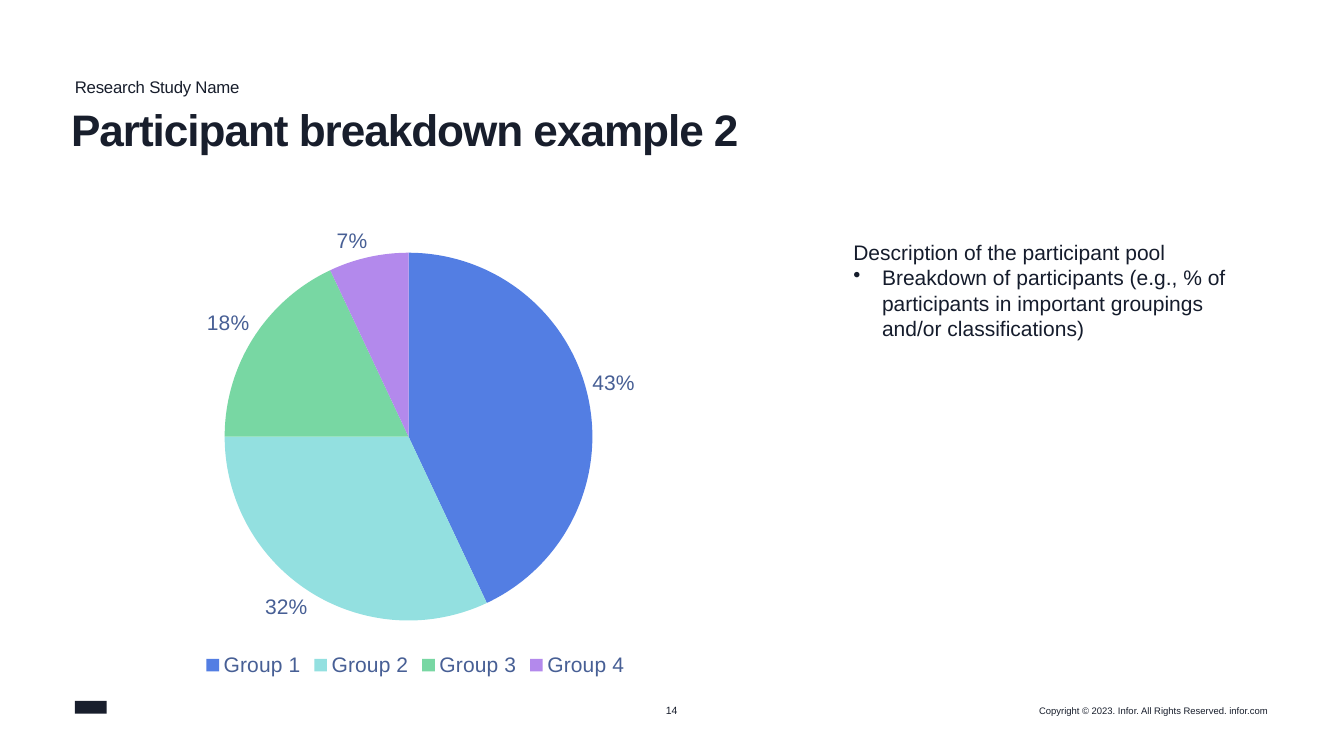
import pptx
import pptx.chart.data
import pptx.dml.color
import pptx.enum.chart
import pptx.enum.shapes
import pptx.enum.text
import pptx.oxml
import pptx.oxml.ns
import pptx.util
from dataclasses import dataclass

WIDTH, HEIGHT = 17.78, 10
LEFT = 0.99
Align = pptx.enum.text.PP_ALIGN
Anchor = pptx.enum.text.MSO_ANCHOR


@dataclass(frozen=True)
class Theme:
    font: str = "Arial"
    ink: str = "181E2C"
    body_ink: str = "151C2C"
    label_ink: str = "475F95"
    slices: tuple = ("537EE3", "93E0E0", "78D7A3", "B389EC")
    title: int = 42
    body: int = 20
    kicker: int = 16
    page: int = 10
    footer: int = 9


THEME = Theme()


def rgb(value):
    return pptx.dml.color.RGBColor.from_string(value)


def inches(*lengths):
    return [pptx.util.Inches(length) for length in lengths]


def set_attributes(target, values):
    for name, value in values.items():
        setattr(target, name, value)


def style_font(font, size, color, bold=False):
    set_attributes(font, {"name": THEME.font, "size": pptx.util.Pt(size), "bold": bold})
    font.color.rgb = rgb(color)


def add_bullet(paragraph, indent):
    properties = paragraph._p.get_or_add_pPr()
    properties.set("marL", str(pptx.util.Inches(indent)))
    properties.set("indent", str(-pptx.util.Inches(indent)))
    bullet = pptx.oxml.parse_xml(
        f'<a:buChar {pptx.oxml.ns.nsdecls("a")} char="•"/>')
    properties.append(bullet)


def add_text(slide, box, lines, size, color, bold=False, spacing=0, inset=(0, 0),
             wrap=True, anchor=Anchor.TOP, bullets=(), **paragraph_format):
    frame = slide.shapes.add_textbox(*inches(*box)).text_frame
    horizontal, vertical = inches(*inset)
    set_attributes(frame, {
        "word_wrap": wrap, "vertical_anchor": anchor,
        "margin_left": horizontal, "margin_right": horizontal,
        "margin_top": vertical, "margin_bottom": vertical})
    for index, line in enumerate(lines):
        paragraph = frame.paragraphs[0] if index == 0 else frame.add_paragraph()
        set_attributes(paragraph, paragraph_format)
        if index in bullets:
            add_bullet(paragraph, 0.38)
        run = paragraph.add_run()
        run.text = line
        style_font(run.font, size, color, bold)
        if spacing:
            run._r.get_or_add_rPr().set("spc", str(round(spacing * 100)))


def set_plot_area(chart, **shares):
    """Place the plot by shares of the chart's size."""
    plot_area = chart._chartSpace.chart.plotArea
    for old in plot_area.findall(pptx.oxml.ns.qn("c:layout")):
        plot_area.remove(old)
    values = "".join(f'<c:{name} val="{share}"/>' for name, share in shares.items())
    plot_area.insert(0, pptx.oxml.parse_xml(
        f'<c:layout {pptx.oxml.ns.nsdecls("c")}><c:manualLayout>'
        '<c:layoutTarget val="inner"/><c:xMode val="edge"/><c:yMode val="edge"/>'
        f'{values}</c:manualLayout></c:layout>'))


def add_pie(slide, box, shares):
    data = pptx.chart.data.CategoryChartData()
    data.categories = [f"Group {number + 1}" for number in range(len(shares))]
    data.add_series("Series 1", shares)
    chart = slide.shapes.add_chart(
        pptx.enum.chart.XL_CHART_TYPE.PIE, *inches(*box), data).chart
    set_attributes(chart, {"has_title": False, "has_legend": True})
    style_font(chart.font, THEME.body, THEME.body_ink)

    # Legend and percentages
    set_attributes(chart.legend, {
        "position": pptx.enum.chart.XL_LEGEND_POSITION.BOTTOM,
        "include_in_layout": False})
    style_font(chart.legend.font, THEME.body, THEME.label_ink)
    plot = chart.plots[0]
    set_attributes(plot, {"vary_by_categories": True, "has_data_labels": True})
    labels = plot.data_labels
    set_attributes(labels, {
        "show_percentage": True, "show_value": False,
        "number_format": "0%", "number_format_is_linked": False,
        "position": pptx.enum.chart.XL_LABEL_POSITION.OUTSIDE_END})
    style_font(labels.font, THEME.body, THEME.label_ink)

    # Slices
    for index, color in enumerate(THEME.slices):
        slice_format = plot.series[0].points[index].format
        slice_format.fill.solid()
        slice_format.fill.fore_color.rgb = rgb(color)
        slice_format.line.fill.background()
    set_plot_area(chart, x=0.22, y=0.08, w=0.54, h=0.79)


def add_mark(slide, box):
    mark = slide.shapes.add_shape(
        pptx.enum.shapes.MSO_SHAPE.RECTANGLE, *inches(*box))
    mark.shadow.inherit = False
    mark.fill.solid()
    mark.fill.fore_color.rgb = rgb(THEME.ink)
    mark.line.fill.background()


def add_footer(slide):
    add_mark(slide, (LEFT, 9.27, 0.42, 0.17))
    footer = {"color": THEME.ink, "wrap": False, "anchor": Anchor.MIDDLE}
    add_text(slide, (WIDTH / 2 - 0.09, 9.31, 0.17, 0.17), ["14"], THEME.page,
             alignment=Align.CENTER, **footer)
    add_text(slide, (13.69, 9.32, 3.08, 0.15),
             ["Copyright © 2023. Infor. All Rights Reserved. infor.com"],
             THEME.footer, alignment=Align.RIGHT, **footer)


def main():
    presentation = pptx.Presentation()
    presentation.slide_width, presentation.slide_height = inches(WIDTH, HEIGHT)
    slide = presentation.slides.add_slide(presentation.slide_layouts[6])

    # Heading
    add_text(slide, (LEFT, 1, 15.79, 0.23), ["Research Study Name"],
             THEME.kicker, THEME.ink, spacing=-0.2, line_spacing=1.05)
    add_text(slide, (0.94, 1.44, 15.81, 1.2), ["Participant breakdown example 2"],
             THEME.title, THEME.ink, bold=True, spacing=-1, line_spacing=0.9)

    # Participant shares and their description
    add_pie(slide, (LEFT, 2.85, 9.01, 6.16), (43, 32, 18, 7))
    add_text(slide, (11.19, 3.12, 5.56, 1.45),
             ["Description of the participant pool",
              "Breakdown of participants (e.g., % of participants in important "
              "groupings and/or classifications)"],
             THEME.body, THEME.body_ink, inset=(0.1, 0.05), bullets=(1,))

    add_footer(slide)
    presentation.save("out.pptx")


if __name__ == "__main__":
    main()
